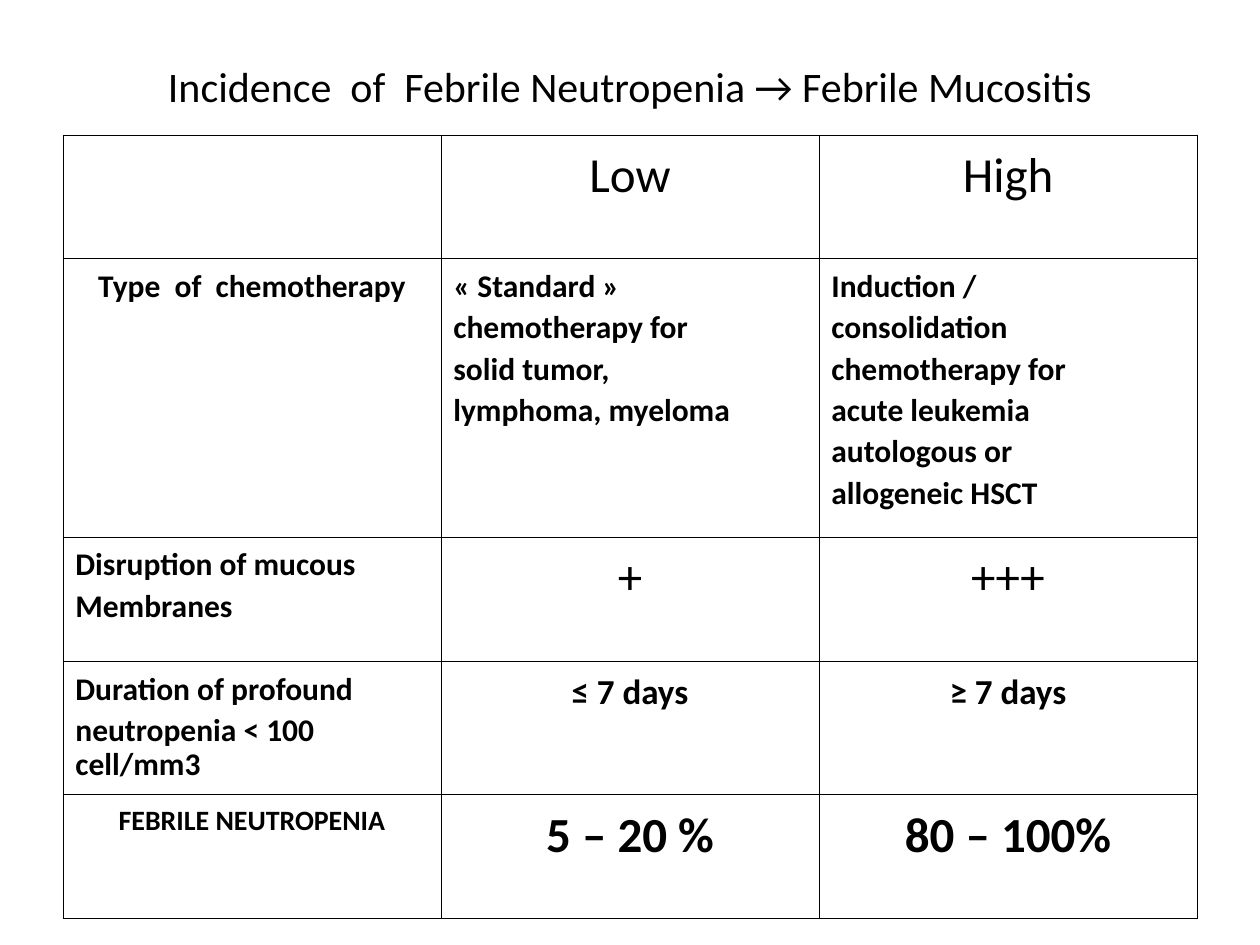
import pptx
import pptx.dml.color
import pptx.enum.text
import pptx.oxml.ns
import pptx.util
from lxml import etree

Cm = pptx.util.Cm
Pt = pptx.util.Pt
ALIGN = pptx.enum.text.PP_ALIGN

FONT = "Calibri"
BLACK = "000000"
OUTER_LINE, INNER_LINE = 0.5, 0.23
TITLE = "Incidence  of  Febrile Neutropenia → Febrile Mucositis"

LARGE = dict(size=28, align=ALIGN.CENTER)
LARGE_BOLD = dict(LARGE, bold=True)
DAYS = dict(size=20, bold=True, align=ALIGN.CENTER)
BODY = dict(size=18, bold=True)
BODY_CENTERED = dict(BODY, align=ALIGN.CENTER)
SMALL = dict(size=16, bold=True, align=ALIGN.CENTER)

COLUMN_WIDTH = 7.62
TOP_MARGINS = {28: 0.33, 20: 0.28, 18: 0.25, 16: 0.25}

# Each row: height in cm, then (text, format) for every cell
ROWS = [
    (2.49, [("", BODY), ("Low", LARGE), ("High", LARGE)]),
    (5.61, [
        ("Type  of  chemotherapy", BODY_CENTERED),
        ("« Standard »\nchemotherapy for\nsolid tumor,\nlymphoma, myeloma", BODY),
        ("Induction /\nconsolidation\nchemotherapy for\nacute leukemia\n"
         "autologous or\nallogeneic HSCT", BODY),
    ]),
    (2.51, [("Disruption of mucous\nMembranes", BODY), ("+", LARGE), ("+++", LARGE)]),
    (2.69, [("Duration of profound\nneutropenia < 100 cell/mm3", BODY),
            ("≤ 7 days", DAYS), ("≥ 7 days", DAYS)]),
    (2.49, [("FEBRILE NEUTROPENIA", SMALL),
            ("5 – 20 %", LARGE_BOLD), ("80 – 100%", LARGE_BOLD)]),
]


def rgb(color):
    return pptx.dml.color.RGBColor.from_string(color)


def write_text(frame, text, size, bold=False, align=ALIGN.LEFT,
               line_spacing=1.0, space_before=0):
    """Write each line of the text as a paragraph of its own."""
    frame.word_wrap = True
    for index, line in enumerate(text.split("\n")):
        paragraph = frame.add_paragraph() if index else frame.paragraphs[0]
        paragraph.alignment = align
        paragraph.line_spacing = line_spacing
        paragraph.space_before = Pt(space_before)
        if not line:
            continue
        run = paragraph.add_run()
        run.text = line
        run.font.name = FONT
        run.font.size = Pt(size)
        run.font.bold = bold
        run.font.color.rgb = rgb(BLACK)


def set_borders(cell, widths):
    """Draw the borders; widths maps L, R, T and B, in that order, to points."""
    qn = pptx.oxml.ns.qn
    properties = cell._tc.get_or_add_tcPr()
    for side, width in widths.items():
        line = etree.SubElement(properties, qn("a:ln" + side), w=str(int(Pt(width))))
        fill = etree.SubElement(line, qn("a:solidFill"))
        etree.SubElement(fill, qn("a:srgbClr"), val=BLACK)


def add_title(slide):
    box = slide.shapes.add_textbox(Cm(1.27), Cm(0.13), Cm(22.86), Cm(3.18))
    box.text_frame.vertical_anchor = pptx.enum.text.MSO_ANCHOR.MIDDLE
    write_text(box.text_frame, TITLE, size=24, align=ALIGN.CENTER)


def add_incidence_table(slide):
    row_count, column_count = len(ROWS), len(ROWS[0][1])
    height = sum(row_height for row_height, _ in ROWS)
    table = slide.shapes.add_table(
        row_count, column_count, Cm(1.27), Cm(2.72),
        Cm(COLUMN_WIDTH * column_count), Cm(height)).table
    table.first_row = False
    table.horz_banding = False
    for column in table.columns:
        column.width = Cm(COLUMN_WIDTH)

    for row_index, (row_height, cells) in enumerate(ROWS):
        table.rows[row_index].height = Cm(row_height)
        for column_index, (text, text_format) in enumerate(cells):
            cell = table.cell(row_index, column_index)
            size = text_format["size"]
            cell.margin_left = cell.margin_right = Cm(0.25)
            cell.margin_top = Cm(TOP_MARGINS[size])
            cell.margin_bottom = Cm(0.13)
            write_text(cell.text_frame, text, line_spacing=0.87,
                       space_before=size / 4, **text_format)
            on_edge = {
                "L": column_index == 0,
                "R": column_index == column_count - 1,
                "T": row_index == 0,
                "B": row_index == row_count - 1,
            }
            set_borders(cell, {side: OUTER_LINE if edge else INNER_LINE
                               for side, edge in on_edge.items()})
            cell.fill.background()


def main():
    presentation = pptx.Presentation()
    presentation.slide_width = Cm(25.4)
    presentation.slide_height = Cm(19.05)
    slide = presentation.slides.add_slide(presentation.slide_layouts[6])
    add_title(slide)
    add_incidence_table(slide)
    presentation.save("out.pptx")


if __name__ == "__main__":
    main()
